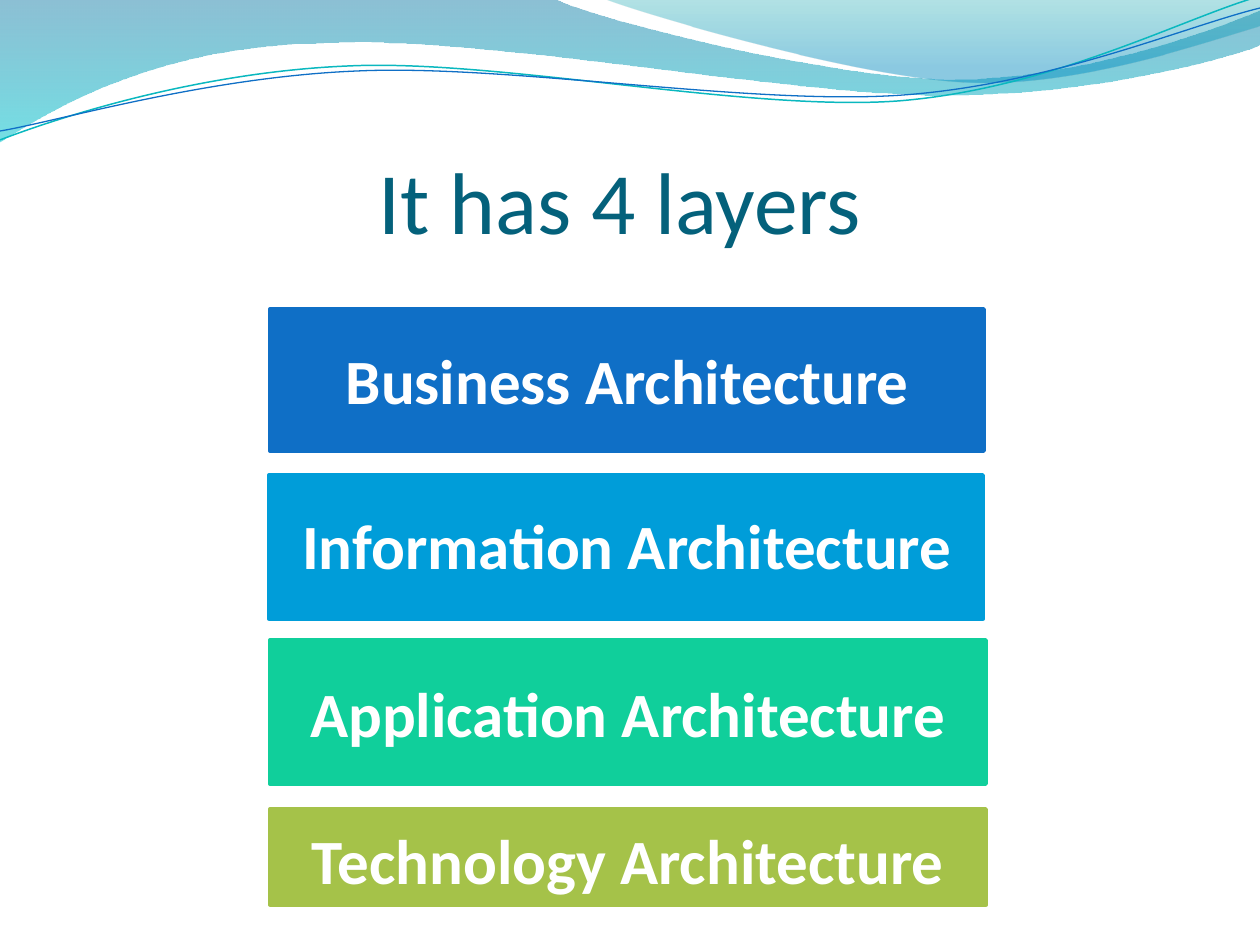
from math import cos, radians, sin
from typing import NamedTuple

from lxml.etree import SubElement
from pptx import Presentation
from pptx.dml.color import RGBColor
from pptx.enum.shapes import MSO_SHAPE
from pptx.enum.text import MSO_ANCHOR, MSO_AUTO_SIZE, PP_ALIGN
from pptx.oxml.ns import qn
from pptx.shapes.autoshape import Shape
from pptx.slide import Slide
from pptx.text.text import TextFrame
from pptx.util import Emu, Pt

PX_PER_INCH = 126
FONT = "Calibri"
STRAND_TILT = 357.3

WHITE = RGBColor(0xFF, 0xFF, 0xFF)
TITLE_TEAL = RGBColor(0x04, 0x61, 0x7B)
BLUE = RGBColor(0x0F, 0x6F, 0xC6)
SKY = RGBColor(0x00, 0x9D, 0xD9)
GREEN = RGBColor(0x10, 0xCF, 0x9B)
OLIVE = RGBColor(0xA5, 0xC2, 0x49)
TURQUOISE = RGBColor(0x0A, 0xB8, 0xBF)
DEEP_BLUE = RGBColor(0x00, 0x74, 0xA1)
AQUA = RGBColor(0x00, 0xC6, 0xCF)
SEA = RGBColor(0x00, 0xA1, 0xA9)
OCEAN = RGBColor(0x00, 0x8B, 0xBF)

Point = tuple[float, float]


class Stop(NamedTuple):
    position: float
    color: RGBColor
    opacity: int


class Wave(NamedTuple):
    """A segment holds one point for a straight line, three for a Bezier curve."""
    start: Point
    segments: list[list[Point]]


class Band(NamedTuple):
    wave: Wave
    stops: list[Stop]


class Strand(NamedTuple):
    wave: Wave
    pivot: Point
    color: RGBColor
    weight: float


class Box(NamedTuple):
    left: int
    top: int
    width: int
    height: int


class Layer(NamedTuple):
    """The bar stands upright and is turned by 90 degrees."""
    name: str
    color: RGBColor
    bar: Box
    label: Box


BANDS = [
    Band(Wave((0, 0), [
        [(554, -1)],
        [(600, 21), (837, 79), (955, 79)],
        [(1075, 79), (1207, 33), (1260, 11)],
        [(1261, 45)],
        [(1239, 55), (1096, 96), (940, 95)],
        [(784, 95), (481, 35), (324, 43)],
        [(163, 45), (58, 105), (-1, 142)],
    ]), [Stop(0, DEEP_BLUE, 45), Stop(1, AQUA, 55)]),
    Band(Wave((604, -1), [
        [(641, 14), (859, 78), (969, 82)],
        [(1079, 87), (1211, 40), (1260, 26)],
        [(1260, 0)],
    ]), [Stop(0, SEA, 30), Stop(0.8, OCEAN, 45)]),
]
STRANDS = [
    Strand(Wave((0, 140), [
        [(60, 117), (199, 72), (349, 66)],
        [(498, 59), (747, 112), (898, 101)],
        [(1050, 89), (1182, 19), (1257, -3)],
    ]), (629, 72), TURQUOISE, 0.85),
    Strand(Wave((0, 131), [
        [(59, 121), (207, 77), (357, 71)],
        [(508, 64), (752, 106), (903, 95)],
        [(1053, 84), (1186, 26), (1260, 8)],
    ]), (629, 74), BLUE, 0.75),
]
LAYERS = [
    Layer("Business Architecture", BLUE, Box(556, 23, 142, 714), Box(318, 335, 619, 89)),
    Layer("Information Architecture", SKY, Box(554, 190, 144, 714), Box(270, 500, 714, 89)),
    Layer("Application Architecture", GREEN, Box(556, 354, 144, 716), Box(270, 668, 716, 89)),
    Layer("Technology Architecture", OLIVE, Box(580, 499, 96, 716), Box(270, 815, 716, 89)),
]


def px(length: float) -> Emu:
    return Emu(round(length * 914400 / PX_PER_INCH))


def place(box: Box) -> list[Emu]:
    return [px(length) for length in box]


def turn(wave: Wave, pivot: Point, degrees: float) -> Wave:
    c, s = cos(radians(degrees)), sin(radians(degrees))

    def turned(point: Point) -> Point:
        dx, dy = point[0] - pivot[0], point[1] - pivot[1]
        return pivot[0] + dx * c - dy * s, pivot[1] + dx * s + dy * c

    return Wave(turned(wave.start), [[turned(p) for p in part] for part in wave.segments])


def draw_wave(slide: Slide, wave: Wave, closed: bool) -> Shape:
    """Join the anchors by lines, then give the curved segments their handles."""
    builder = slide.shapes.build_freeform(*map(px, wave.start))
    anchors = [tuple(map(px, segment[-1])) for segment in wave.segments]
    builder.add_line_segments(anchors, close=closed)
    shape = builder.convert_to_shape()
    shape.shadow.inherit = False
    edges = list(shape._element.iter(qn("a:lnTo")))
    for edge, (*handles, _) in zip(edges, wave.segments):
        if handles:
            edge.tag = qn("a:cubicBezTo")
        for index, (x, y) in enumerate(handles):
            handle = SubElement(edge, qn("a:pt"), x=str(px(x) - shape.left), y=str(px(y) - shape.top))
            edge.insert(index, handle)
    return shape


def draw_band(slide: Slide, band: Band) -> None:
    shape = draw_wave(slide, band.wave, closed=True)
    shape.line.fill.background()
    shape.fill.gradient()
    shape.fill.gradient_angle = 270
    for gradient_stop, stop in zip(shape.fill.gradient_stops, band.stops):
        gradient_stop.position = stop.position
        gradient_stop.color.rgb = stop.color
    colors = list(shape._element.spPr.iter(qn("a:srgbClr")))
    for color, stop in zip(colors, band.stops):
        SubElement(color, qn("a:alpha"), val=str(stop.opacity * 1000))


def draw_strand(slide: Slide, strand: Strand) -> None:
    level_wave = turn(strand.wave, strand.pivot, -STRAND_TILT)
    shape = draw_wave(slide, level_wave, closed=False)
    shape.rotation = STRAND_TILT
    shape.fill.background()
    shape.line.color.rgb = strand.color
    shape.line.width = Pt(strand.weight)


def write_centred(frame: TextFrame, text: str, size: int, color: RGBColor, bold: bool) -> None:
    paragraph = frame.paragraphs[0]
    paragraph.alignment = PP_ALIGN.CENTER
    run = paragraph.add_run()
    run.text = text
    run.font.name = FONT
    run.font.size = Pt(size)
    run.font.bold = bold
    run.font.color.rgb = color


def draw_title(slide: Slide, text: str) -> None:
    title = slide.shapes.title
    title.left, title.top, title.width, title.height = place(Box(53, 95, 1134, 157))
    frame = title.text_frame
    frame.auto_size = MSO_AUTO_SIZE.NONE
    frame.vertical_anchor = MSO_ANCHOR.BOTTOM
    frame.margin_left = frame.margin_right = frame.margin_bottom = 0
    frame.margin_top = px(6)
    write_centred(frame, text, 50, TITLE_TEAL, bold=False)


def draw_bar(slide: Slide, layer: Layer) -> None:
    bar = slide.shapes.add_shape(MSO_SHAPE.RECTANGLE, *place(layer.bar))
    bar.rotation = 90
    bar.shadow.inherit = False
    bar.fill.solid()
    bar.fill.fore_color.rgb = layer.color
    bar.line.color.rgb = layer.color
    bar.line.width = Pt(2)


def draw_label(slide: Slide, layer: Layer) -> None:
    frame = slide.shapes.add_textbox(*place(layer.label)).text_frame
    frame.word_wrap = True
    frame.auto_size = MSO_AUTO_SIZE.SHAPE_TO_FIT_TEXT
    write_centred(frame, layer.name, 36, WHITE, bold=True)


def main() -> None:
    deck = Presentation()
    deck.slide_width, deck.slide_height = px(1260), px(945)
    slide = deck.slides.add_slide(deck.slide_layouts.get_by_name("Title Only"))
    for band in BANDS:
        draw_band(slide, band)
    for strand in STRANDS:
        draw_strand(slide, strand)
    draw_title(slide, "It has 4 layers")
    for layer in LAYERS:
        draw_bar(slide, layer)
    for layer in LAYERS:
        draw_label(slide, layer)
    deck.save("out.pptx")


if __name__ == "__main__":
    main()
